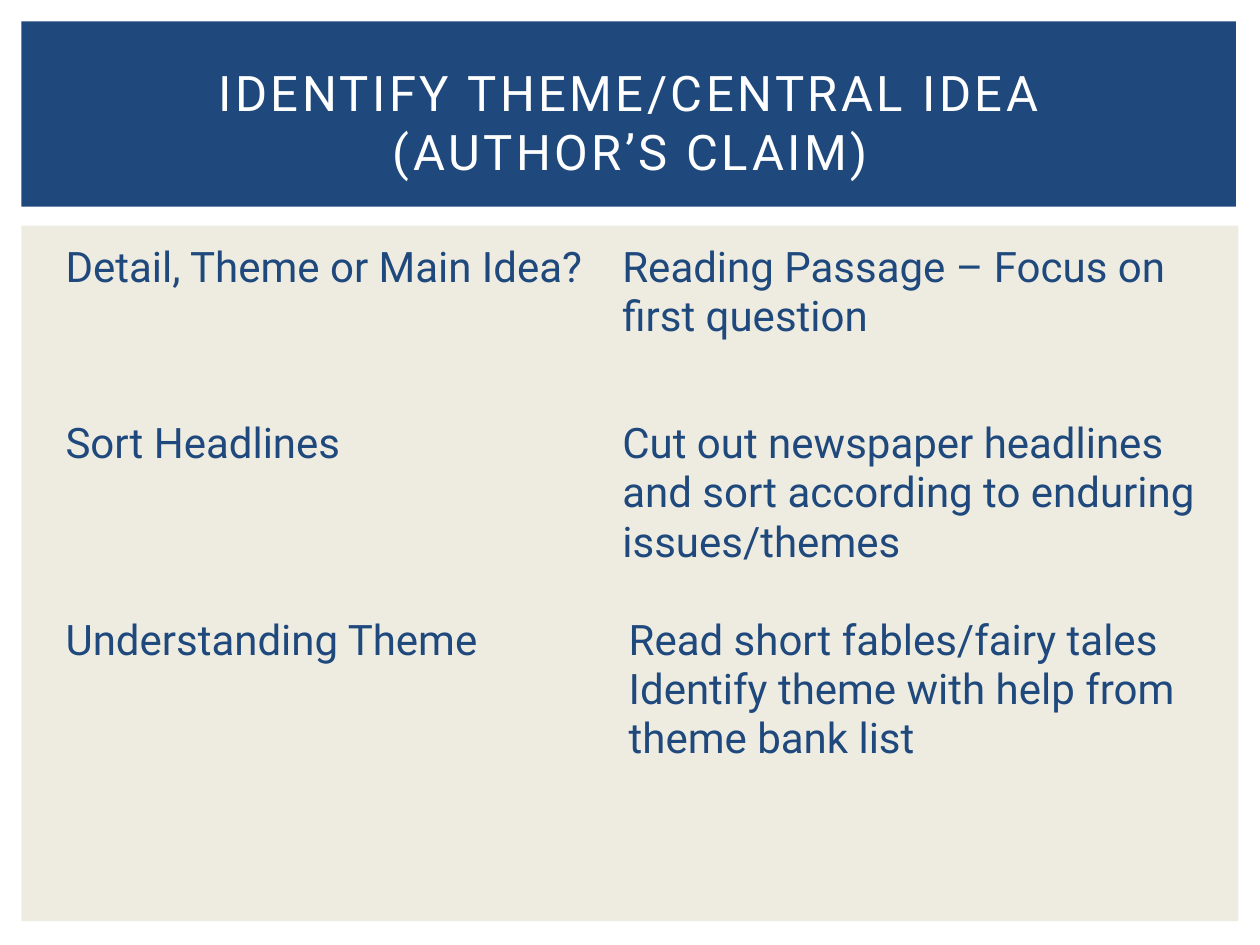
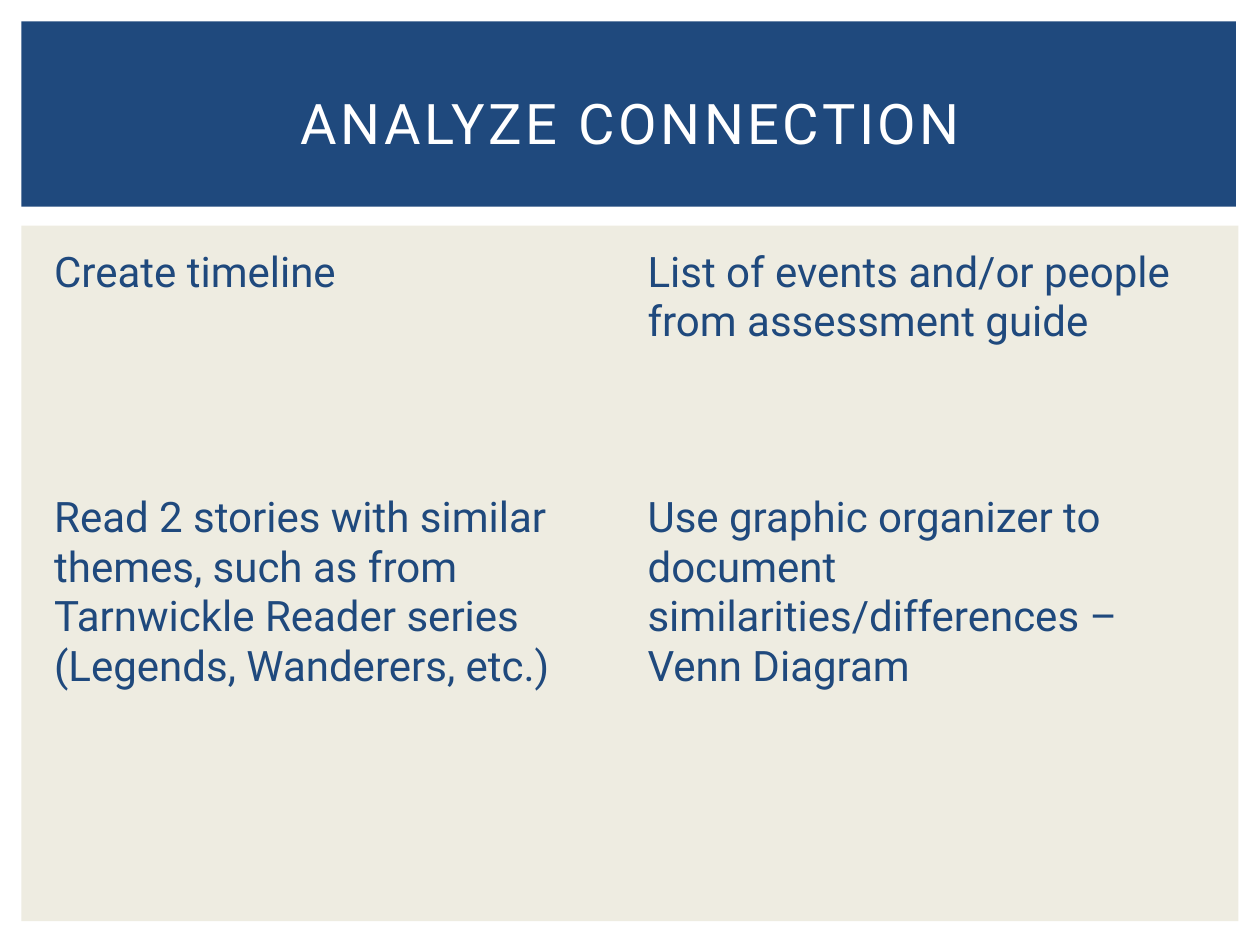
import pptx
import pptx.util
import pptx.dml.color
import pptx.enum.shapes
import pptx.enum.text
import pptx.oxml.ns

COLORS = {"navy": "1F497D", "cream": "EEECE1", "white": "FFFFFF"}
FONT = "Roboto"
BODY_SIZE = 24
NO_STYLE = "{2D5ABB26-0587-4C30-8999-92F81FD0307C}"

BANDS = [
    ("cream", (0.17, 1.79, 9.66, 5.52)),
    ("navy", (0.17, 0.17, 9.64, 1.47)),
]
TITLE_BOX = (0.42, 0.39, 9.17, 1.15)

SLIDES = [
    {
        "title": "IDENTIFY THEME/CENTRAL IDEA\v(AUTHOR’S CLAIM)",
        "title_size": 28,
        "origin": (0.42, 1.88),
        "cols": [4.42, 4.83],
        "rows": [1.4, 1.56, 1.91],
        "cells": [
            ["Detail, Theme or Main Idea?", "Reading Passage – Focus on first question"],
            ["Sort Headlines",
             "Cut out newspaper headlines and sort according to enduring issues/themes"],
            ["Understanding Theme",
             "Read short fables/fairy tales\nIdentify theme with help from theme bank list"],
        ],
        "indented": (2, 1),
    },
    {
        "title": "ANALYZE CONNECTION",
        "title_size": 32,
        "origin": (0.33, 1.92),
        "cols": [4.71, 4.71],
        "rows": [1.95, 3.3],
        "cells": [
            ["Create timeline", "List of events and/or people from assessment guide"],
            ["Read 2 stories with similar themes, such as from Tarnwickle Reader series "
             "(Legends, Wanderers, etc.)",
             "Use graphic organizer to document similarities/differences – Venn Diagram"],
        ],
        "indented": None,
    },
]


def inches(values):
    return [pptx.util.Inches(v) for v in values]


def rgb(name):
    return pptx.dml.color.RGBColor.from_string(COLORS[name])


def style(p, size, color):
    p.font.name = FONT
    p.font.size = pptx.util.Pt(size)
    p.font.color.rgb = rgb(color)


def add_bands(s):
    for color, box in BANDS:
        sp = s.shapes.add_shape(pptx.enum.shapes.MSO_SHAPE.RECTANGLE, *inches(box))
        sp.shadow.inherit = False
        sp.fill.solid()
        sp.fill.fore_color.rgb = rgb(color)
        sp.line.fill.background()


def add_title(s, text, size):
    tf = s.shapes.add_textbox(*inches(TITLE_BOX)).text_frame
    tf.word_wrap = True
    tf.vertical_anchor = pptx.enum.text.MSO_ANCHOR.MIDDLE
    p = tf.paragraphs[0]
    p.text = text
    p.alignment = pptx.enum.text.PP_ALIGN.CENTER
    style(p, size, "white")
    for r in p.runs:
        r.font._element.set("spc", "200")


def add_activities(s, content):
    cols, rows = content["cols"], content["rows"]
    box = (*content["origin"], sum(cols), sum(rows))
    table = s.shapes.add_table(len(rows), len(cols), *inches(box)).table
    table.first_row = table.horz_banding = False
    table._tbl.tblPr.find(pptx.oxml.ns.qn("a:tableStyleId")).text = NO_STYLE
    for column, width in zip(table.columns, inches(cols)):
        column.width = width
    for row, height in zip(table.rows, inches(rows)):
        row.height = height
    for i, texts in enumerate(content["cells"]):
        for j, text in enumerate(texts):
            cell = table.cell(i, j)
            cell.fill.background()
            cell.text = text
            for p in cell.text_frame.paragraphs:
                style(p, BODY_SIZE, "navy")
                if (i, j) == content["indented"]:
                    p._p.get_or_add_pPr().set("marL", str(pptx.util.Inches(0.05)))


def main():
    prs = pptx.Presentation()
    prs.slide_width, prs.slide_height = inches((10, 7.5))
    for content in SLIDES:
        s = prs.slides.add_slide(prs.slide_layouts[6])
        add_bands(s)
        add_activities(s, content)
        add_title(s, content["title"], content["title_size"])
    prs.save("out.pptx")


if __name__ == "__main__":
    main()
